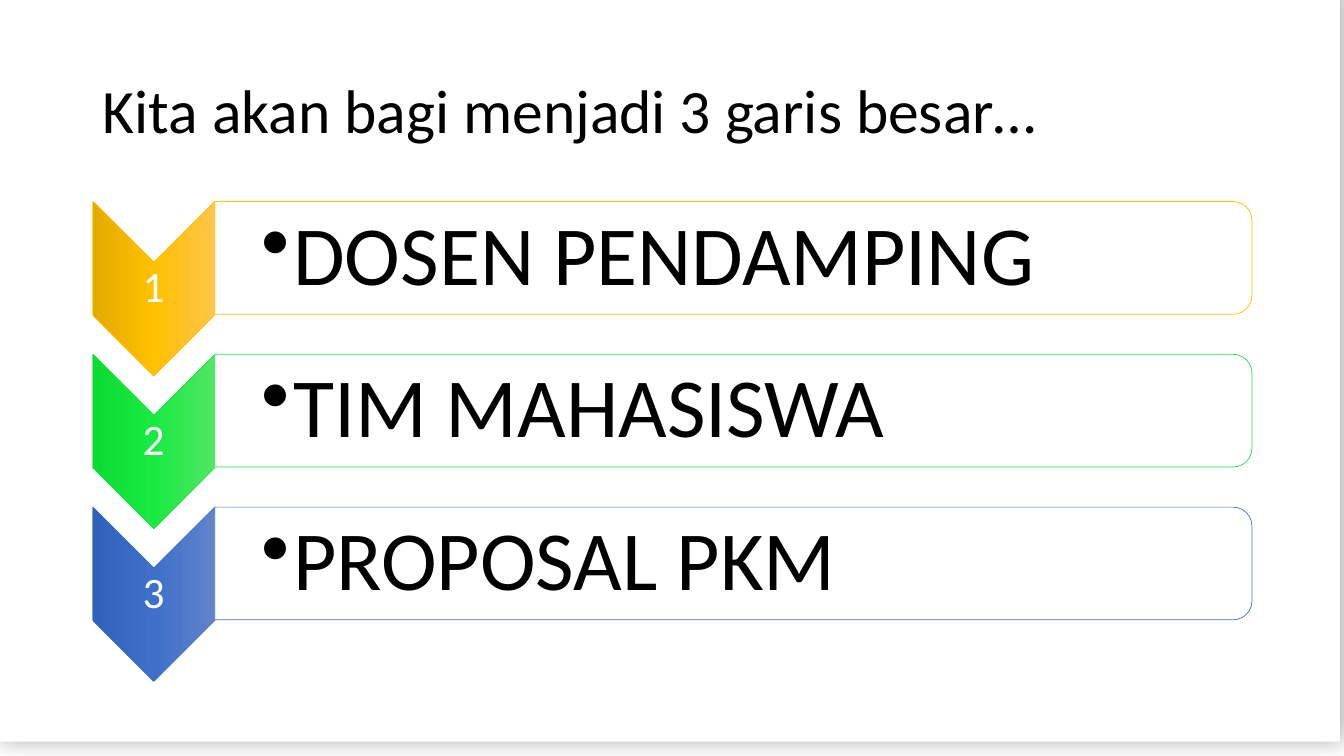
from lxml.etree import SubElement as Sub
from pptx import Presentation
from pptx.dml.color import RGBColor
from pptx.enum.shapes import MSO_SHAPE as SHAPE
from pptx.enum.text import MSO_ANCHOR as ANCHOR, PP_ALIGN as ALIGN
from pptx.oxml.ns import qn
from pptx.util import Cm, Pt

FONT = "Calibri"
# label, line colour, gradient from top to bottom
STEPS = [
    ("DOSEN PENDAMPING", "FFC000", ("FFC64B", "FFC000", "E3AB00")),
    ("TIM MAHASISWA", "23E148", ("51E663", "19EA42", "0CDB34")),
    ("PROPOSAL PKM", "4472C4", ("6183CB", "3E70CA", "3062BB")),
]


def rgb(value):
    return RGBColor.from_string(value)


def add_shape(slide, kind, x, y, w, h, fill, line=None, turned=False):
    """Place a preset shape in a box in cm; turned means a quarter turn clockwise."""
    if turned:
        x, y, w, h = x + (w - h) / 2, y + (h - w) / 2, h, w
    s = slide.shapes.add_shape(kind, Cm(x), Cm(y), Cm(w), Cm(h))
    s.rotation = 90 if turned else 0
    s.shadow.inherit = False
    s.fill.solid()
    s.fill.fore_color.rgb = rgb(fill)
    if line:
        s.line.color.rgb = rgb(line)
        s.line.width = Pt(0.5)
    else:
        s.line.fill.background()
    return s


def set_gradient(s, colours):
    s.fill.gradient()
    grad = s._element.spPr.find(qn("a:gradFill"))
    stops = grad.find(qn("a:gsLst"))
    for stop in list(stops):
        stops.remove(stop)
    for i, colour in enumerate(colours):
        stop = Sub(stops, qn("a:gs"), pos=str(i * 50000))
        Sub(stop, qn("a:srgbClr"), val=colour)
    grad.find(qn("a:lin")).set("ang", "5400000")


def style(tf, text, size, colour, align):
    tf.word_wrap = True
    tf.vertical_anchor = ANCHOR.MIDDLE
    p = tf.paragraphs[0]
    p.text = text
    p.alignment = align
    p.line_spacing = 0.9
    p.font.name = FONT
    p.font.size = Pt(size)
    p.font.color.rgb = rgb(colour)
    return p


def add_text(slide, x, y, w, h, text, size, colour, align, left, margin):
    tf = slide.shapes.add_textbox(Cm(x), Cm(y), Cm(w), Cm(h)).text_frame
    tf.margin_left = Cm(left)
    tf.margin_right = tf.margin_top = tf.margin_bottom = Cm(margin)
    return style(tf, text, size, colour, align)


def add_page(slide, x, y, w, h):
    """White sheet with a soft shadow."""
    s = add_shape(slide, SHAPE.RECTANGLE, x, y, w, h, "FFFFFF")
    effects = s._element.spPr.find(qn("a:effectLst"))
    shadow = Sub(effects, qn("a:outerShdw"), blurRad=str(Pt(17)),
                 dist=str(Pt(3)), dir="0", algn="ctr", rotWithShape="0")
    colour = Sub(shadow, qn("a:srgbClr"), val="000000")
    Sub(colour, qn("a:alpha"), val="35000")


def add_title(slide, x, y, w, h):
    title = slide.shapes.title
    title.left, title.top, title.width, title.height = Cm(x), Cm(y), Cm(w), Cm(h)
    style(title.text_frame, "Kita akan bagi menjadi 3 garis besar…", 44, "000000", ALIGN.LEFT)
    # Bring the title in front of the sheet
    slide.shapes._spTree.append(title._element)


def add_step(slide, x, y, w, h, number, label, line, colours):
    """Numbered chevron on the left, rounded bar with a bullet on the right."""
    chevron_w, bar_h = 3.07, 2.84
    # Chevron and number
    s = add_shape(slide, SHAPE.CHEVRON, x, y, chevron_w, h, colours[1], line, turned=True)
    set_gradient(s, colours)
    add_text(slide, x, y + chevron_w / 2, chevron_w, h - chevron_w,
             str(number), 31, "FFFFFF", ALIGN.CENTER, 0.05, 0.05)

    # Bar
    bar_x, bar_w = x + chevron_w, w - chevron_w
    s = add_shape(slide, SHAPE.ROUND_2_SAME_RECTANGLE, bar_x, y, bar_w, bar_h,
                  "FFFFFF", line, turned=True)
    colour = s._element.spPr.find(qn("a:solidFill"))[0]
    Sub(colour, qn("a:alpha"), val="90000")

    # Bulleted label
    p = add_text(slide, bar_x, y + 0.14, bar_w - 0.14, bar_h - 0.28,
                 label, 60, "000000", ALIGN.LEFT, 1.19, 0.1)
    pPr = p._p.get_or_add_pPr()
    pPr.set("marL", str(Cm(0.79)))
    pPr.set("indent", str(-Cm(0.79)))
    bullet = Sub(pPr, qn("a:buChar"), char="•")
    pPr.find(qn("a:lnSpc")).addnext(bullet)


def add_steps(slide, x, y, w, h):
    pitch, step_h = 3.85, h - 3.85 * (len(STEPS) - 1)
    for i, step in enumerate(STEPS):
        add_step(slide, x, y + i * pitch, w, step_h, i + 1, *step)


def main():
    prs = Presentation()
    prs.slide_width, prs.slide_height = Cm(33.87), Cm(19.05)
    slide = prs.slides.add_slide(prs.slide_layouts[5])
    add_page(slide, -0.1, -0.36, 33.87, 19.05)
    add_title(slide, 2.34, 1.02, 29.21, 3.68)
    add_steps(slide, 2.34, 5.08, 29.21, 12.09)
    prs.save("out.pptx")


if __name__ == "__main__":
    main()
